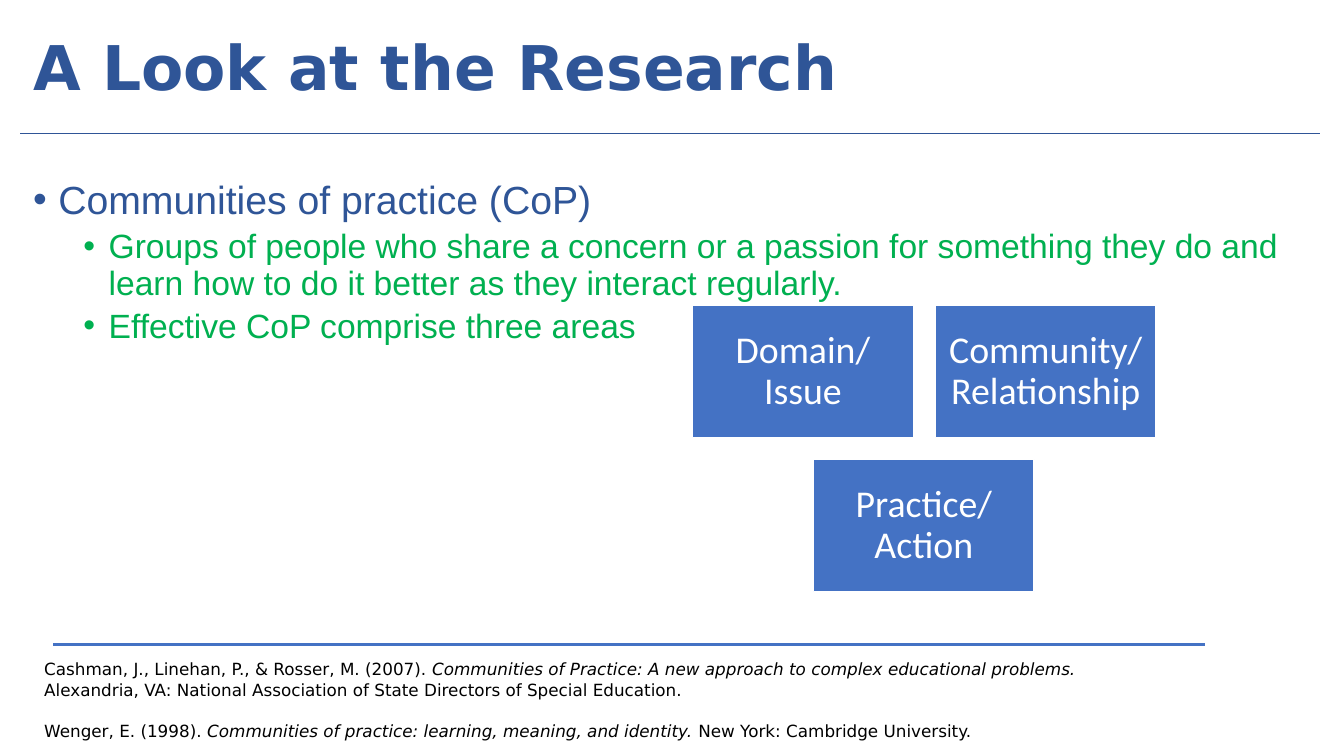
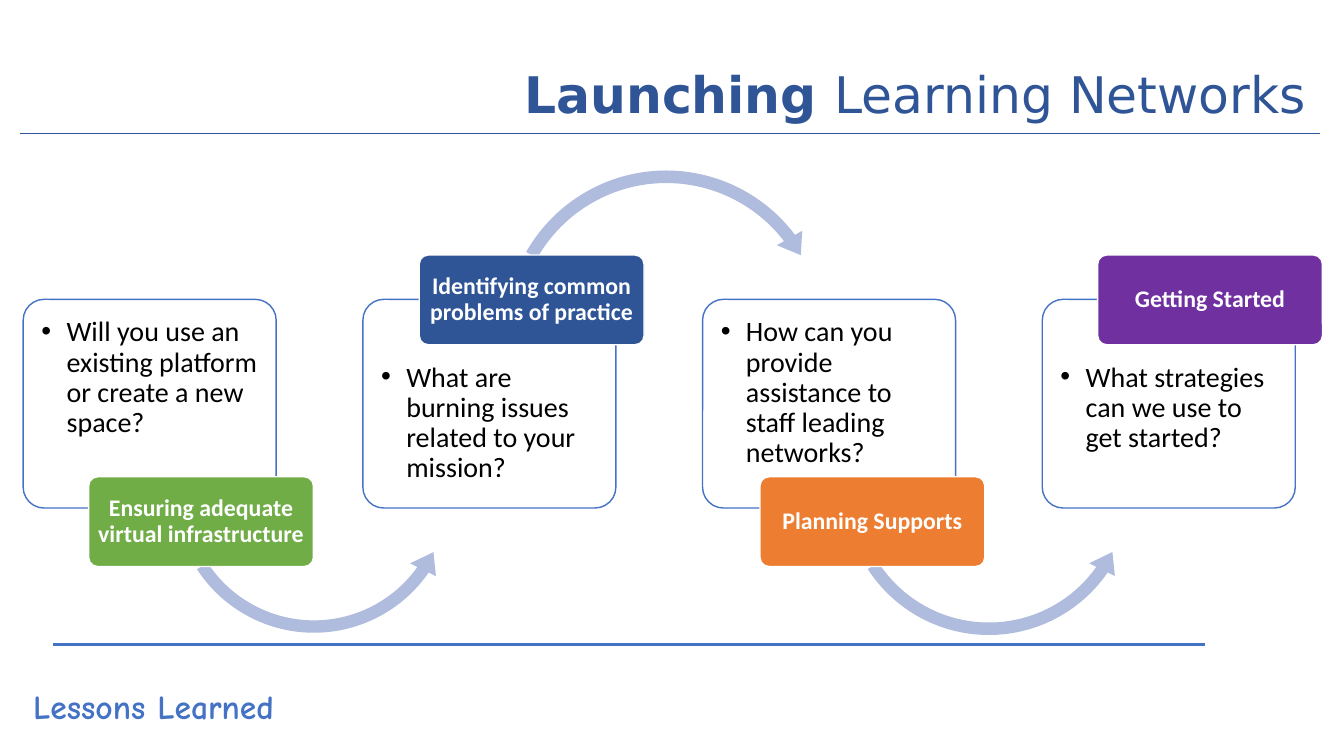
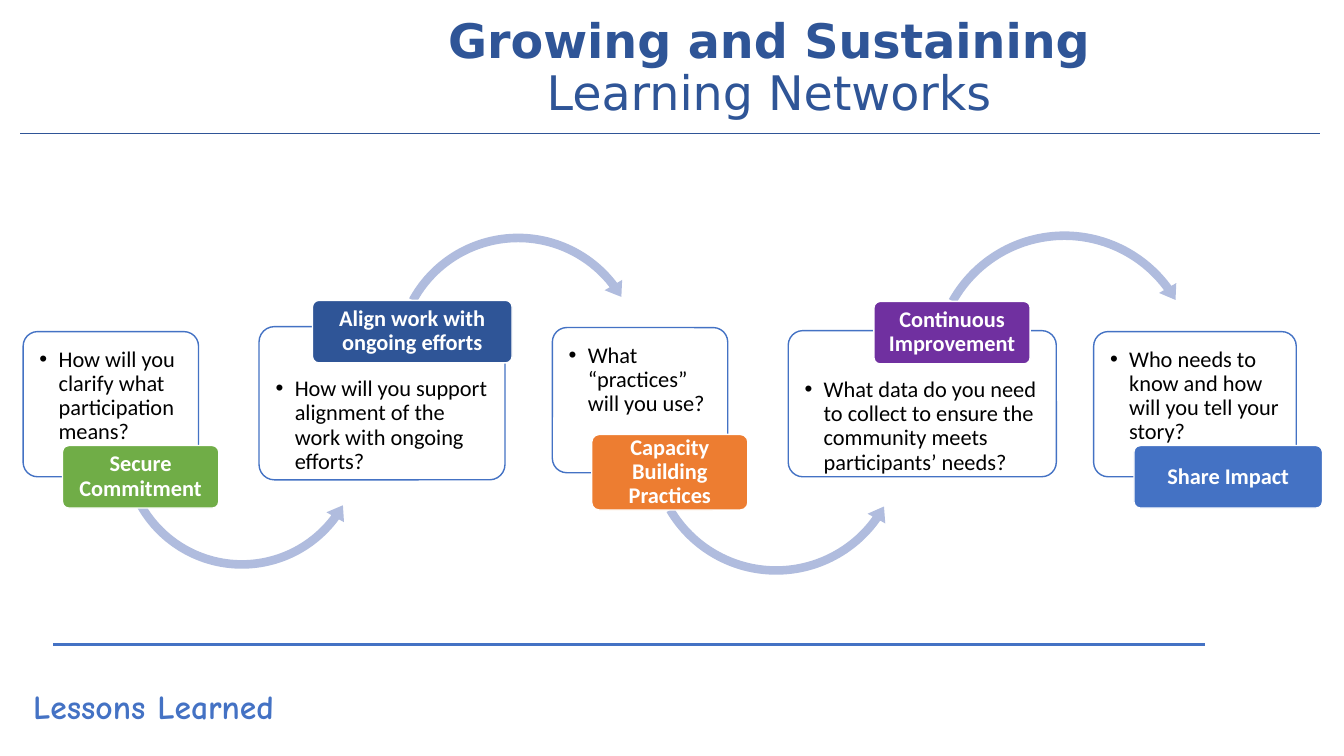
"""Build three slides on communities of practice and learning networks."""
from dataclasses import dataclass
from typing import Any, Optional

from lxml import etree
from pptx import Presentation
from pptx import util as u
from pptx.dml.color import RGBColor
from pptx.enum import shapes, text
from pptx.oxml.ns import qn

PX = 9144
COLORS = {
    "navy": "2F5597", "blue": "4472C4", "green": "70AD47", "orange": "ED7D31",
    "purple": "7030A0", "leaf": "00B050", "arrow": "B0BCDE",
    "white": "FFFFFF", "black": "000000",
}
FONTS = {"title": "DejaVu Sans", "body": "Arial", "diagram": "Calibri", "tag": "Comic Neue"}
MIDDLE = text.MSO_ANCHOR.MIDDLE
CENTER = text.PP_ALIGN.CENTER
OVER = shapes.MSO_SHAPE.CIRCULAR_ARROW
UNDER = shapes.MSO_SHAPE.LEFT_CIRCULAR_ARROW
ROUNDED = shapes.MSO_SHAPE.ROUNDED_RECTANGLE


@dataclass(frozen=True)
class Box:
    left: int
    top: int
    width: int
    height: int

    def emu(self) -> tuple[int, ...]:
        return tuple(value * PX for value in (self.left, self.top, self.width, self.height))


@dataclass(frozen=True)
class Style:
    font: str
    size: int
    color: str
    bold: bool = False


@dataclass(frozen=True)
class Run:
    text: str
    format: Optional[dict[str, Any]] = None


@dataclass(frozen=True)
class Para:
    runs: tuple[Run, ...]
    style: Style
    format: Optional[dict[str, Any]] = None
    indent: int = 0
    hanging: int = 0


@dataclass(frozen=True)
class Arrow:
    kind: Any
    left: int
    top: int
    size: int
    band_percent: float
    angles: tuple[float, float, float]
    head_percent: float

    def adjustments(self) -> tuple[float, ...]:
        return (self.band_percent / 100, *self.angles, self.head_percent / 100)


@dataclass(frozen=True)
class Step:
    question: str
    card: Box
    label: str
    tab: Box
    color: str
    arrow: Optional[Arrow] = None


@dataclass(frozen=True)
class Flow:
    question_size: int
    label_size: int
    hanging: int
    tab_margin: int
    tab_gap: int
    steps: tuple[Step, ...]


def rgb(name: str) -> RGBColor:
    return RGBColor.from_string(COLORS[name])


def set_all(target: Any, values: dict[str, Any]) -> None:
    for name, value in values.items():
        setattr(target, name, value)


def set_margins(frame: Any, left: int, top: int, right: int, bottom: int) -> None:
    set_all(frame, {"margin_left": left * PX, "margin_top": top * PX,
                    "margin_right": right * PX, "margin_bottom": bottom * PX})


def write(frame: Any, paras: list[Para], anchor: Any = text.MSO_ANCHOR.TOP) -> None:
    set_all(frame, {"word_wrap": True, "vertical_anchor": anchor})
    for index, para in enumerate(paras):
        paragraph = frame.add_paragraph() if index else frame.paragraphs[0]
        if para.hanging:
            properties = paragraph._p.get_or_add_pPr()
            properties.set("marL", str(para.indent * PX))
            properties.set("indent", str(-para.hanging * PX))
            etree.SubElement(properties, qn("a:buFont")).set("typeface", "Arial")
            etree.SubElement(properties, qn("a:buChar")).set("char", "•")
        set_all(paragraph, {"alignment": text.PP_ALIGN.LEFT, **(para.format or {})})
        for part in para.runs:
            run = paragraph.add_run()
            run.text = part.text
            style = para.style
            set_all(run.font, {"name": style.font, "size": u.Pt(style.size),
                               "bold": style.bold, **(part.format or {})})
            run.font.color.rgb = rgb(style.color)


def add_text(slide: Any, box: Box, paras: list[Para], anchor: Any = text.MSO_ANCHOR.TOP) -> None:
    write(slide.shapes.add_textbox(*box.emu()).text_frame, paras, anchor)


def add_shape(slide: Any, kind: Any, box: Box, fill: Optional[str] = None,
              line: Optional[str] = None, adjustments: tuple[float, ...] = ()) -> Any:
    shape = slide.shapes.add_shape(kind, *box.emu())
    shape.shadow.inherit = False
    for index, value in enumerate(adjustments):
        shape.adjustments[index] = value
    if fill:
        shape.fill.solid()
        shape.fill.fore_color.rgb = rgb(fill)
    else:
        shape.fill.background()
    if line:
        shape.line.color.rgb = rgb(line)
        shape.line.width = u.Pt(1)
    else:
        shape.line.fill.background()
    return shape


def add_rule(slide: Any, left: int, right: int, top: int, color: str, width: float) -> None:
    line = slide.shapes.add_connector(
        shapes.MSO_CONNECTOR.STRAIGHT, left * PX, top * PX, right * PX, top * PX)
    line.line.color.rgb = rgb(color)
    line.line.width = u.Pt(width)
    etree.SubElement(line._element.spPr, qn("a:effectLst"))


def add_slide(presentation: Any, box: Box, size: int, strong: str, plain: str = "") -> Any:
    slide = presentation.slides.add_slide(presentation.slide_layouts[6])
    add_rule(slide, 20, 1310, 132, "navy", 0.75)
    add_rule(slide, 53, 1195, 639, "blue", 2.25)
    runs = [Run(strong, {"bold": True})]
    if plain:
        runs.append(Run(plain))
    alignment = CENTER if plain else text.PP_ALIGN.LEFT
    title = Para(tuple(runs), Style(FONTS["title"], size, "navy"),
                 {"alignment": alignment, "line_spacing": 0.9})
    add_text(slide, box, [title], MIDDLE)
    return slide


def add_centered(shape: Any, words: str, style: Style) -> None:
    write(shape.text_frame, [Para((Run(words),), style,
                                  {"alignment": CENTER, "line_spacing": 0.9})], MIDDLE)


def add_flow(slide: Any, flow: Flow) -> None:
    question_style = Style(FONTS["diagram"], flow.question_size, "black")
    label_style = Style(FONTS["diagram"], flow.label_size, "white", True)
    for step in flow.steps:
        card = add_shape(slide, ROUNDED, step.card, line="blue", adjustments=(0.1,))
        top = 12
        if step.tab.top < step.card.top:
            top = step.tab.top + step.tab.height - step.card.top + flow.tab_gap
        set_margins(card.text_frame, 12, top, 12, 0)
        write(card.text_frame, [Para((Run(step.question),), question_style,
                                     {"line_spacing": 0.9}, flow.hanging, flow.hanging)])
        if step.arrow:
            arrow = step.arrow
            add_shape(slide, arrow.kind, Box(arrow.left, arrow.top, arrow.size, arrow.size),
                      "arrow", adjustments=arrow.adjustments())
        tab = add_shape(slide, ROUNDED, step.tab, step.color, "white", (0.1,))
        set_margins(tab.text_frame, flow.tab_margin, 2, flow.tab_margin, 2)
        add_centered(tab, step.label, label_style)
    add_text(slide, Box(23, 676, 269, 50), [
        Para((Run("Lessons Learned"),), Style(FONTS["tag"], 24, "blue", True))])


def add_research(presentation: Any) -> None:
    slide = add_slide(presentation, Box(23, 22, 1290, 95), 44, "A Look at the Research")
    detail = Style(FONTS["body"], 24, "leaf")
    spacing = {"line_spacing": 0.9, "space_before": u.Pt(5)}
    points = [Para((Run("Communities of practice (CoP)"),), Style(FONTS["body"], 28, "navy"),
                   {"line_spacing": 0.9}, 25, 25)]
    for words in (
        "Groups of people who share a concern or a passion for something they do and "
        "learn how to do it better as they interact regularly.",
        "Effective CoP comprise three areas",
    ):
        points.append(Para((Run(words),), detail, {"level": 1, **spacing}, 75, 25))
    add_text(slide, Box(23, 174, 1290, 465), points)

    areas = (("Domain/ Issue", 687, 303), ("Community/ Relationship", 928, 303),
             ("Practice/ Action", 807, 456))
    for words, left, top in areas:
        area = add_shape(slide, shapes.MSO_SHAPE.RECTANGLE, Box(left, top, 219, 131),
                         "blue", "white")
        set_margins(area.text_frame, 11, 11, 11, 11)
        add_centered(area, words, Style(FONTS["diagram"], 27, "white"))

    source = Style(FONTS["title"], 12, "black")
    italic = {"italic": True}
    add_text(slide, Box(34, 649, 1049, 91), [
        Para((Run("Cashman, J., Linehan, P., & Rosser, M. (2007). "),
              Run("Communities of Practice: A new approach to complex educational problems. ",
                  italic),
              Run("Alexandria, VA: National Association of State Directors of "
                  "Special Education.")), source),
        Para((Run("Wenger, E. (1998). "),
              Run("Communities of practice: learning, meaning, and identity. ", italic),
              Run("New York: Cambridge University.")), source, {"space_before": u.Pt(15)}),
    ])


def launch_card(index: int) -> Box:
    return Box(23 + 337 * index, 297, 251, 207)


LAUNCH = Flow(20, 17, 25, 5, 12, (
    Step("Will you use an existing platform or create a new space?", launch_card(0),
         "Ensuring adequate virtual infrastructure", Box(88, 473, 223, 89), "green",
         Arrow(UNDER, 165, 343, 293, 4.2, (5.29, 21.01, 88.21), 4.9)),
    Step("What are burning issues related to your mission?", launch_card(1),
         "Identifying common problems of practice", Box(416, 253, 223, 89), "navy",
         Arrow(OVER, 493, 161, 336, 3.7, (4.56, 193.69, 125.76), 4.3)),
    Step("How can you provide assistance to staff leading networks?", launch_card(2),
         "Planning Supports", Box(754, 473, 223, 89), "orange",
         Arrow(UNDER, 830, 336, 302, 4.1, (5.12, 20.9, 88.27), 4.7)),
    Step("What strategies can we use to get started?", launch_card(3),
         "Getting Started", Box(1089, 253, 223, 89), "purple"),
))

GROWTH = Flow(16, 16, 19, 3, 10, (
    Step("How will you clarify what participation means?", Box(23, 329, 174, 144),
         "Secure Commitment", Box(62, 442, 155, 62), "green",
         Arrow(UNDER, 115, 320, 250, 3.4, (4.23, 21.82, 90.08), 4)),
    Step("How will you support alignment of the work with ongoing efforts?",
         Box(257, 324, 244, 152),
         "Align work with ongoing efforts", Box(310, 298, 198, 62), "navy",
         Arrow(OVER, 385, 226, 258, 3.3, (4.09, 193.59, 125.19), 3.9)),
    Step("What “practices” will you use?", Box(548, 325, 174, 144),
         "Capacity Building Practices", Box(587, 431, 155, 75), "orange",
         Arrow(UNDER, 638, 312, 264, 3.2, (3.99, 21.19, 89.69), 3.8)),
    Step("What data do you need to collect to ensure the community meets "
         "participants’ needs?", Box(782, 328, 266, 145),
         "Continuous Improvement", Box(867, 299, 155, 62), "purple",
         Arrow(OVER, 919, 224, 274, 3.1, (3.83, 194.22, 125.56), 3.6)),
    Step("Who needs to know and how will you tell your story?", Box(1085, 329, 201, 144),
         "Share Impact", Box(1125, 442, 187, 62), "blue"),
))


def main() -> None:
    presentation = Presentation()
    set_all(presentation, {"slide_width": 4000 * PX // 3, "slide_height": 750 * PX})
    add_research(presentation)
    launch = add_slide(presentation, Box(504, 44, 808, 105), 36,
                       "Launching ", "Learning Networks")
    add_flow(launch, LAUNCH)
    growth = add_slide(presentation, Box(398, 16, 730, 105), 34,
                       "Growing and Sustaining ", "Learning Networks")
    add_flow(growth, GROWTH)
    presentation.save("out.pptx")


if __name__ == "__main__":
    main()
